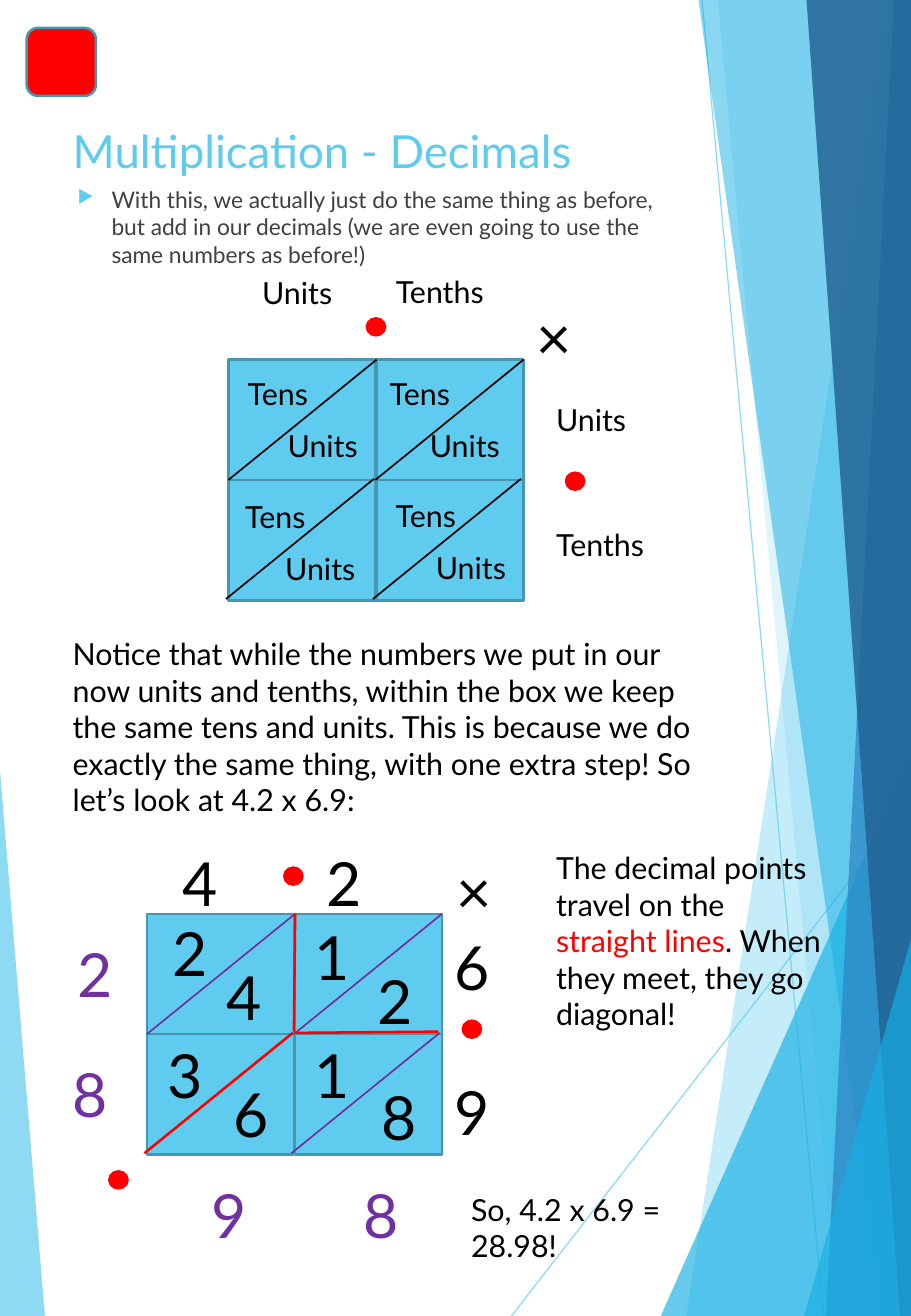
from lxml.etree import SubElement as add_sub
from pptx import Presentation
from pptx.dml.color import RGBColor as Rgb
from pptx.enum.shapes import MSO_CONNECTOR as Link, MSO_SHAPE as Kind
from pptx.enum.text import MSO_AUTO_SIZE as Fit
from pptx.oxml.ns import qn
from pptx.util import Pt

PX = 9144  # 100 px to the inch
WIDE, HIGH = 750, 1083
CELL_W, CELL_H = 122, 99
FONT = "Lato"

BLACK = Rgb(0x00, 0x00, 0x00)
GREY = Rgb(0x40, 0x40, 0x40)
RED = Rgb(0xFF, 0x00, 0x00)
PURPLE = Rgb(0x70, 0x30, 0xA0)
SKY = Rgb(0x5F, 0xCB, 0xEF)
EDGE = Rgb(0x46, 0x96, 0xB1)
CYAN = Rgb(0x17, 0xB0, 0xE4)
BLUE = Rgb(0x2E, 0x83, 0xC3)
NAVY = Rgb(0x22, 0x62, 0x92)

BANDS = [
    (SKY, 36, [(731, 0), (565, HIGH), (WIDE, HIGH), (WIDE, 0)]),
    (SKY, 20, [(591, 0), (690, HIGH), (WIDE, HIGH), (WIDE, 0)]),
    (CYAN, 66, [(544, HIGH), (WIDE, 619), (WIDE, HIGH)]),
    (CYAN, 50, [(575, 0), (727, HIGH), (WIDE, HIGH), (WIDE, 0)]),
    (BLUE, 70, [(736, 0), (680, HIGH), (WIDE, HIGH), (WIDE, 0)]),
    (NAVY, 82, [(664, 0), (741, HIGH), (WIDE, HIGH), (WIDE, 0)]),
    (CYAN, 66, [(662, HIGH), (WIDE, 773), (WIDE, HIGH)]),
]
LABELS = [("Units", 206, 221, 83), ("Units", 448, 325, 83),
          ("Tenths", 316, 220, 111), ("Tenths", 448, 428, 101)]
TENS = [(194, 304), (311, 304), (192, 405), (316, 404)]
DIGITS = [("8", 304, 884), ("2", 132, 749), ("2", 301, 788), ("4", 177, 785),
          ("1", 249, 849), ("1", 249, 752), ("3", 128, 849), ("6", 182, 881)]
SUMS = [("8", 289, 964), ("9", 164, 964), ("8", 50, 865), ("2", 54, 766)]
DOTS = [(302, 262), (466, 389), (234, 714), (381, 840), (90, 964)]
PATHS = [((243, 752), (242, 849)), ((243, 850), (361, 849)),
         ((241, 850), (119, 949))]


def fade(item, alpha):
    """Set the opacity, in percent, of every colour of a shape."""
    for color in item.element.spPr.iter(qn("a:srgbClr")):
        add_sub(color, qn("a:alpha"), val=str(alpha * 1000))


def band(shapes, color, alpha, spots):
    pen = shapes.build_freeform(*spots[0], scale=PX)
    pen.add_line_segments(spots[1:], close=True)
    item = pen.convert_to_shape()
    item.shadow.inherit = False
    item.fill.solid()
    item.fill.fore_color.rgb = color
    item.line.fill.background()
    fade(item, alpha)


def line(shapes, start, end, color, width=1):
    ends = [n * PX for n in (*start, *end)]
    item = shapes.add_connector(Link.STRAIGHT, *ends)
    item.line.color.rgb = color
    item.line.width = Pt(width)
    add_sub(item.element.spPr, qn("a:effectLst"))
    return item


def block(shapes, kind, x, y, w, h, fill, edge):
    item = shapes.add_shape(kind, x * PX, y * PX, w * PX, h * PX)
    item.shadow.inherit = False
    item.fill.solid()
    item.fill.fore_color.rgb = fill
    item.line.color.rgb = edge
    item.line.width = Pt(1.5)


def run(para, words, size=18, color=BLACK):
    part = para.add_run()
    part.text = words
    part.font.name = FONT
    part.font.size = Pt(size)
    part.font.color.rgb = color


def text(shapes, words, x, y, w, h=40, grow=True, **look):
    """Add a text box and return its first paragraph and its frame."""
    frame = shapes.add_textbox(x * PX, y * PX, w * PX, h * PX).text_frame
    frame.word_wrap = True
    frame.auto_size = Fit.SHAPE_TO_FIT_TEXT if grow else Fit.NONE
    para = frame.paragraphs[0]
    run(para, words, **look)
    return para, frame


def digit(shapes, words, x, y, w=59, color=BLACK):
    return text(shapes, words, x, y, w, 71, size=36, color=color)


def bullet(para):
    props = para._p.get_or_add_pPr()
    props.set("marL", str(28 * PX))
    props.set("indent", str(-28 * PX))
    color = add_sub(props, qn("a:buClr"))
    add_sub(color, qn("a:srgbClr"), val=str(SKY))
    add_sub(props, qn("a:buSzPct"), val="80000")
    add_sub(props, qn("a:buChar"), char="▶")


def tab(para, x):
    stops = add_sub(para._p.get_or_add_pPr(), qn("a:tabLst"))
    add_sub(stops, qn("a:tab"), pos=str(x * PX), algn="l")


def grid(shapes, x, y, ink):
    """Draw two by two cells, each with a rising diagonal."""
    for row in range(2):
        for col in range(2):
            block(shapes, Kind.RECTANGLE, x + col * CELL_W, y + row * CELL_H,
                  CELL_W - 1, CELL_H, SKY, EDGE)
    for row in range(2):
        for col in range(2):
            left = x + col * (CELL_W - 1) - 2 * row
            top = y + row * (CELL_H - 1)
            line(shapes, (left, top + CELL_H), (left + CELL_W, top), ink)


def backdrop(shapes):
    band(shapes, SKY, 70, [(0, 634), (37, HIGH), (0, HIGH)])
    for start, end in [((421, HIGH), (WIDE, 660)), ((578, 0), (678, HIGH))]:
        fade(line(shapes, start, end, SKY, 0.75), 70)
    for color, alpha, spots in BANDS:
        band(shapes, color, alpha, spots)


def method(shapes):
    grid(shapes, 188, 296, BLACK)
    for words, x, y, w in LABELS:
        text(shapes, words, x, y, w)
    for x, y in TENS:
        text(shapes, "Tens", x, y, 83)
        text(shapes, "Units", x + 33, y + 43, 83)
    digit(shapes, "×", 432, 242, 83)


def example(shapes):
    grid(shapes, 121, 752, PURPLE)
    for spot in DIGITS:
        digit(shapes, *spot)
    for spot in SUMS:
        digit(shapes, *spot, color=PURPLE)
    para, _ = digit(shapes, "4\t2", 140, 691, 209)
    tab(para, 119)
    _, frame = text(shapes, "6", 364, 760, 118, 192, size=36)
    para = frame.add_paragraph()
    para.space_before = Pt(43)
    run(para, "9", size=36)
    digit(shapes, "×", 366, 698, 83)


def main():
    deck = Presentation()
    deck.slide_width, deck.slide_height = WIDE * PX, HIGH * PX
    shapes = deck.slides.add_slide(deck.slide_layouts[6]).shapes
    backdrop(shapes)
    text(shapes, "Multiplication - Decimals", 50, 96, 521, 209,
         grow=False, size=27, color=SKY)
    para, _ = text(
        shapes, "With this, we actually just do the same thing as before, "
        "but add in our decimals (we are even going to use the same numbers "
        "as before!)", 54, 148, 521, 828, grow=False, size=13.5, color=GREY)
    bullet(para)
    method(shapes)
    example(shapes)
    text(shapes, "Notice that while the numbers we put in our now units and "
         "tenths, within the box we keep the same tens and units. This is "
         "because we do exactly the same thing, with one extra step! So "
         "let’s look at 4.2 x 6.9:", 50, 518, 534, 162)
    para, _ = text(shapes, "The decimal points travel on the ",
                   448, 694, 239, 162)
    run(para, "straight lines", color=RED)
    run(para, ". When they meet, they go diagonal!")
    block(shapes, Kind.ROUNDED_RECTANGLE, 22, 23, 57, 56, RED, EDGE)
    for x, y in DOTS:
        block(shapes, Kind.OVAL, x, y, 15, 14, RED, RED)
    for start, end in PATHS:
        line(shapes, start, end, RED, 1.5)
    text(shapes, "So, 4.2 x 6.9 = 28.98!", 378, 975, 252, 71)
    deck.save("out.pptx")


if __name__ == "__main__":
    main()
